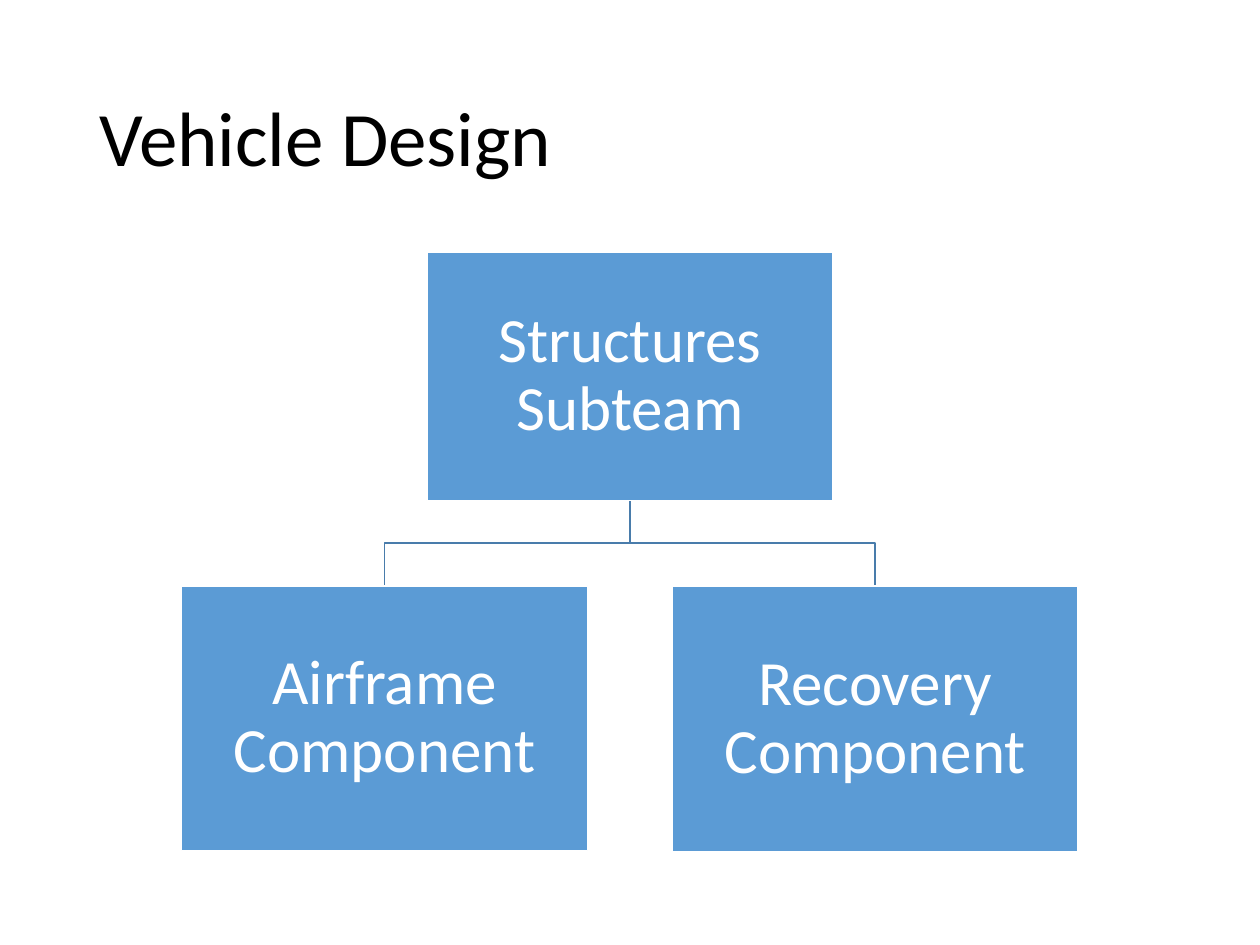
from dataclasses import dataclass

from pptx import Presentation
from pptx.dml.color import RGBColor
from pptx.enum.shapes import MSO_SHAPE as Preset
from pptx.enum.text import MSO_ANCHOR as Anchor, MSO_AUTO_SIZE as AutoSize, PP_ALIGN as Align
from pptx.slide import Slide
from pptx.text.text import TextFrame
from pptx.util import Pt

BLACK = RGBColor(0x00, 0x00, 0x00)
WHITE = RGBColor(0xFF, 0xFF, 0xFF)
BLUE = RGBColor(0x5B, 0x9B, 0xD5)
LINK_BLUE = RGBColor(0x49, 0x7C, 0xAB)
FONT = "Calibri"

# Chart geometry in points
CENTER = 360
BRANCH = 140.2
BOX_WIDTH = 232
TEAM_TOP = 144
COMPONENT_TOP = 334.8


@dataclass(frozen=True)
class Unit:
    label: str
    center: float
    top: float
    height: float

    @property
    def bottom(self) -> float:
        return self.top + self.height


def write(frame: TextFrame, text: str, size: float, color: RGBColor, align: Align) -> None:
    frame.word_wrap = True
    frame.auto_size = AutoSize.NONE
    frame.vertical_anchor = Anchor.MIDDLE
    paragraph = frame.paragraphs[0]
    paragraph.alignment = align
    paragraph.line_spacing = 0.9
    run = paragraph.add_run()
    run.text = text
    run.font.name = FONT
    run.font.size = Pt(size)
    run.font.color.rgb = color


def draw_link(slide: Slide, parent: Unit, child: Unit) -> None:
    middle = (parent.bottom + child.top) / 2
    builder = slide.shapes.build_freeform(Pt(parent.center), Pt(parent.bottom))
    corners = [(parent.center, middle), (child.center, middle), (child.center, child.top)]
    builder.add_line_segments([(Pt(x), Pt(y)) for x, y in corners], close=False)
    link = builder.convert_to_shape()
    link.shadow.inherit = False
    link.fill.background()
    link.line.color.rgb = LINK_BLUE
    link.line.width = Pt(1)


def draw_unit(slide: Slide, unit: Unit) -> None:
    box = slide.shapes.add_shape(
        Preset.RECTANGLE, Pt(unit.center - BOX_WIDTH / 2), Pt(unit.top),
        Pt(BOX_WIDTH), Pt(unit.height))
    box.shadow.inherit = False
    box.fill.solid()
    box.fill.fore_color.rgb = BLUE
    box.line.color.rgb = WHITE
    box.line.width = Pt(1)
    frame = box.text_frame
    frame.margin_left = frame.margin_right = Pt(2)
    frame.margin_top = frame.margin_bottom = Pt(2)
    write(frame, unit.label, 36, WHITE, Align.CENTER)


def main() -> None:
    deck = Presentation()
    deck.slide_width, deck.slide_height = Pt(720), Pt(540)
    slide = deck.slides.add_slide(deck.slide_layouts[5])

    # Title
    title = slide.shapes.title
    title.left, title.top, title.width, title.height = Pt(49.5), Pt(28.8), Pt(621), Pt(104.4)
    write(title.text_frame, "Vehicle Design", 44, BLACK, Align.LEFT)

    # Team and its components
    team = Unit("Structures Subteam", CENTER, TEAM_TOP, 142)
    components = [
        Unit("Airframe Component", CENTER - BRANCH, COMPONENT_TOP, 151.2),
        Unit("Recovery Component", CENTER + BRANCH, COMPONENT_TOP, 151.9),
    ]

    # Links lie behind the boxes
    for component in components:
        draw_link(slide, team, component)
    for unit in [team, *components]:
        draw_unit(slide, unit)

    deck.save("out.pptx")


if __name__ == "__main__":
    main()
